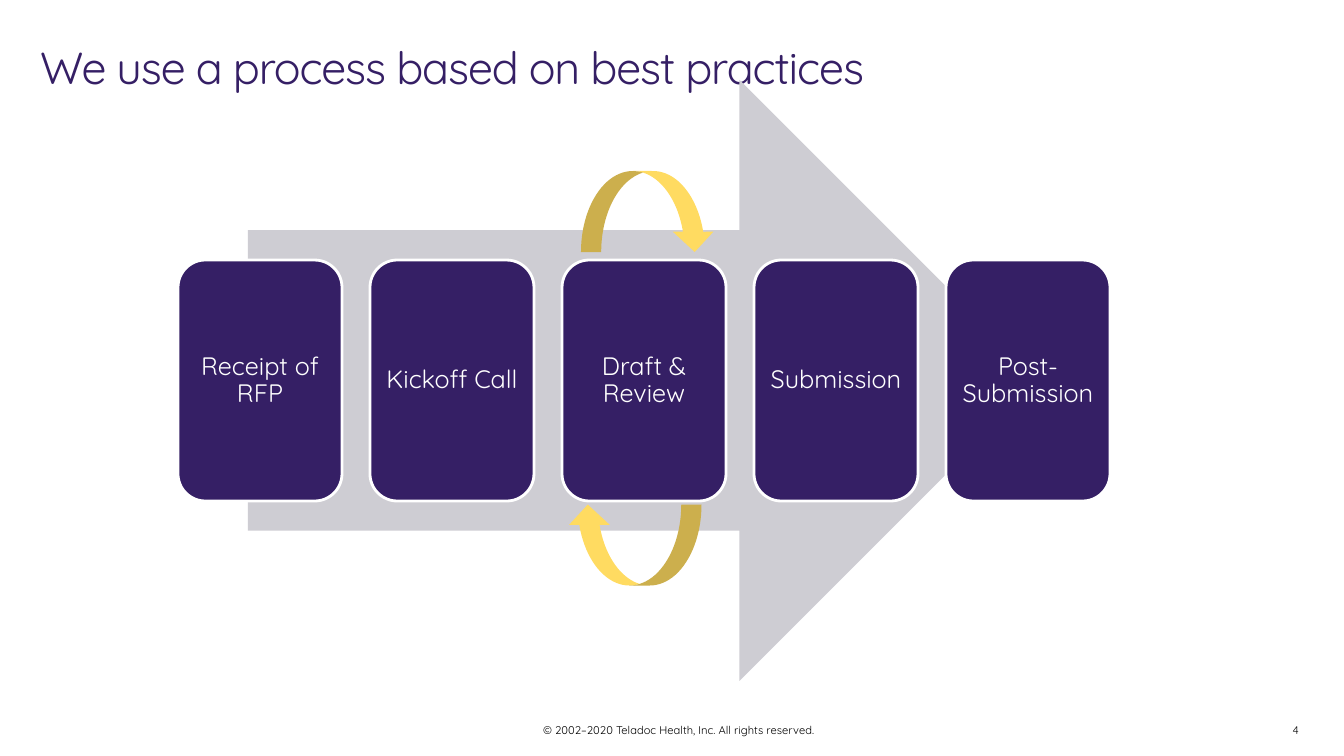
from pptx import Presentation
from pptx.dml.color import RGBColor
from pptx.enum.shapes import MSO_SHAPE as SHAPE
from pptx.enum.text import MSO_ANCHOR as ANCHOR, MSO_AUTO_SIZE as AUTO, PP_ALIGN as ALIGN
from pptx.util import Pt

# Content
TITLE = "We use a process based on best practices"
STEPS = ["Receipt of RFP", "Kickoff Call", "Draft & Review", "Submission", "Post-Submission"]
FOOTERS = [  # text, box, alignment
    ("4", (1254, 723, 45, 13), ALIGN.RIGHT),
    ("© 2002–2020 Teladoc Health, Inc. All rights reserved.", (503, 723, 352, 13), ALIGN.CENTER),
]
LOOPS = [  # shape, box, rotation
    (SHAPE.CURVED_DOWN_ARROW, (581, 171, 134, 81), 0),
    (SHAPE.CURVED_LEFT_ARROW, (594, 478, 81, 134), 90),
]

# Style and geometry, in px
FONT = "Quicksand"
PURPLE, GREY, YELLOW, WHITE, BLACK = "351F65", "CECDD3", "FFDB61", "FFFFFF", "000000"
SLIDE_W, SLIDE_H = 1344, 756
ARROW_BOX = (248, 80, 792, 601)
CARD_LEFT, CARD_TOP, CARD_W, CARD_H, CARD_PITCH = 178, 260, 164, 241, 192
CARD_INSET = 7


def px(n):
    return round(n * 914400 / 100.8)


def rgb(value):
    return RGBColor.from_string(value)


def put_text(sp, text, size, color, align, anchor=ANCHOR.TOP, inset=0, spacing=None):
    tf = sp.text_frame
    frame_format = dict(word_wrap=True, auto_size=AUTO.NONE, vertical_anchor=anchor)
    frame_format.update({f"margin_{side}": px(inset) for side in ("left", "top", "right", "bottom")})
    for name, value in frame_format.items():
        setattr(tf, name, value)
    p = tf.paragraphs[0]
    p.alignment, p.line_spacing = align, spacing
    r = p.add_run()
    r.text = text
    for name, value in dict(name=FONT, size=Pt(size), bold=False).items():
        setattr(r.font, name, value)
    r.font.color.rgb = rgb(color)
    return r


def add_shape(kind, box, fill, line=None):
    sp = slide.shapes.add_shape(kind, *map(px, box))
    sp.shadow.inherit = False
    sp.fill.solid()
    sp.fill.fore_color.rgb = rgb(fill)
    if line:
        sp.line.color.rgb = rgb(line)
        sp.line.width = Pt(2)
    else:
        sp.line.fill.background()
    return sp


prs = Presentation()
prs.slide_width, prs.slide_height = px(SLIDE_W), px(SLIDE_H)
slide = prs.slides.add_slide(prs.slide_layouts[5])

# Title
title = slide.shapes.title
title.left, title.top, title.width, title.height = map(px, (40, 40, 1263, 54))
r = put_text(title, TITLE, 32, PURPLE, ALIGN.LEFT)
r.font._element.set("spc", "-80")

# Footer and page number
for text, box, align in FOOTERS:
    put_text(slide.shapes.add_textbox(*map(px, box)), text, 8, BLACK, align)

# Process arrow with its steps
add_shape(SHAPE.RIGHT_ARROW, ARROW_BOX, GREY)
for i, step in enumerate(STEPS):
    box = (CARD_LEFT + i * CARD_PITCH, CARD_TOP, CARD_W, CARD_H)
    card = add_shape(SHAPE.ROUNDED_RECTANGLE, box, PURPLE, WHITE)
    put_text(card, step, 18, WHITE, ALIGN.CENTER, ANCHOR.MIDDLE, CARD_INSET, 0.9)

# Review loop around the middle step
for kind, box, rotation in LOOPS:
    add_shape(kind, box, YELLOW).rotation = rotation

prs.save("out.pptx")
